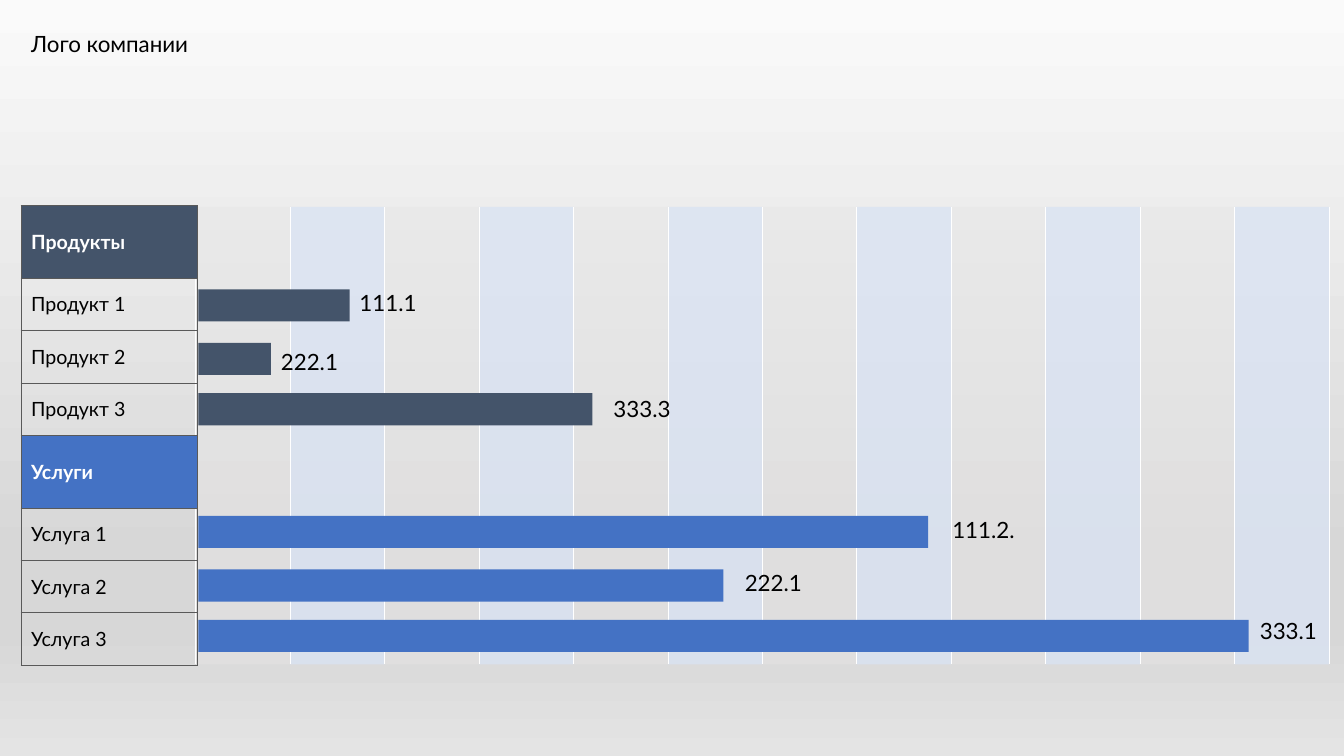
from dataclasses import dataclass
from typing import NamedTuple

from lxml.etree import SubElement
from pptx import Presentation
from pptx.dml.color import RGBColor
from pptx.enum.shapes import MSO_SHAPE
from pptx.enum.text import MSO_ANCHOR, MSO_AUTO_SIZE, PP_ALIGN
from pptx.oxml.ns import qn
from pptx.util import Cm, Pt


@dataclass(frozen=True)
class Theme:
    font: str = "Lato"
    text: str = "000000"
    on_dark: str = "FFFFFF"
    products: str = "44546A"
    services: str = "4472C4"
    label_border: str = "595959"
    grid_border: str = "FFFFFF"
    stripes: tuple = (("E7E6E6", 50), ("DAE3F3", 80))
    backdrop: tuple = ((0, "FAFAFA"), (74, "D7D7D7"), (83, "D7D7D7"), (100, "E4E4E4"))
    value_size: int = 16
    label_size: int = 14
    border_width: float = 0.5


THEME = Theme()
NO_STYLE_TABLE = "{2D5ABB26-0587-4C30-8999-92F81FD0307C}"


class Bar(NamedTuple):
    """A bar and its value label; lengths in centimetres."""
    name: str
    top: float
    length: float
    value: str
    value_left: float
    value_top: float
    value_width: float


GROUPS = (
    ("Продукты", THEME.products, (
        Bar("Продукт 1", 7.29, 3.81, "111.1", 8.81, 7.16, 2.62),
        Bar("Продукт 2", 8.64, 1.83, "222.1", 6.83, 8.64, 2.77),
        Bar("Продукт 3", 9.91, 9.93, "333.3", 15.21, 9.83, 2.44),
    )),
    ("Услуги", THEME.services, (
        Bar("Услуга 1", 13.0, 18.39, "111.2.", 23.75, 12.88, 2.77),
        Bar("Услуга 2", 14.35, 13.23, "222.1", 18.52, 14.22, 2.62),
        Bar("Услуга 3", 15.62, 26.47, "333.1", 31.5, 15.42, 2.44),
    )),
)
BAR_LEFT, BAR_HEIGHT, VALUE_HEIGHT = 5.0, 0.81, 0.94
HEADER_HEIGHT, ROW_HEIGHT = 1.83, 1.32
STRIPE_COUNT, STRIPE_WIDTH = 12, 2.38


def paint_background(slide):
    fill = slide.background.fill
    fill.gradient()
    fill.gradient_angle = 270
    stops = slide.element.find(".//" + qn("a:gsLst"))
    for stop in list(stops):
        stops.remove(stop)
    for percent, color in THEME.backdrop:
        stop = SubElement(stops, qn("a:gs"), pos=str(percent * 1000))
        SubElement(stop, qn("a:srgbClr"), val=color)


def add_run(paragraph, text, size, color=THEME.text, bold=False):
    run = paragraph.add_run()
    run.text = text
    font = run.font
    font.name, font.size, font.bold = THEME.font, Pt(size), bold
    font.color.rgb = RGBColor.from_string(color)


def add_text(slide, text, left, top, width, wrap=True,
             anchor=MSO_ANCHOR.MIDDLE, align=PP_ALIGN.LEFT):
    box = slide.shapes.add_textbox(Cm(left), Cm(top), Cm(width), Cm(VALUE_HEIGHT))
    frame = box.text_frame
    frame.word_wrap = wrap
    frame.auto_size = MSO_AUTO_SIZE.SHAPE_TO_FIT_TEXT
    frame.vertical_anchor = anchor
    paragraph = frame.paragraphs[0]
    paragraph.alignment = align
    add_run(paragraph, text, THEME.value_size)


def add_plain_table(slide, left, top, widths, heights):
    """Add a table without a preset style, sized by its columns and rows."""
    frame = slide.shapes.add_table(len(heights), len(widths), Cm(left), Cm(top),
                                   Cm(sum(widths)), Cm(sum(heights)))
    table = frame.table
    table.first_row = table.horz_banding = False
    frame.element.find(".//" + qn("a:tableStyleId")).text = NO_STYLE_TABLE
    for column, width in zip(table.columns, widths):
        column.width = Cm(width)
    for row, height in zip(table.rows, heights):
        row.height = Cm(height)
    return table


def set_borders(cell, sides, color):
    properties = cell._tc.get_or_add_tcPr()
    for side in sides:
        line = SubElement(properties, qn(f"a:ln{side}"), w=str(Pt(THEME.border_width)))
        solid = SubElement(line, qn("a:solidFill"))
        SubElement(solid, qn("a:srgbClr"), val=color)


def fill_cell(cell, color, opacity=100):
    cell.fill.solid()
    cell.fill.fore_color.rgb = RGBColor.from_string(color)
    if opacity < 100:
        rgb = cell._tc.tcPr.find(qn("a:solidFill")).find(qn("a:srgbClr"))
        SubElement(rgb, qn("a:alpha"), val=str(opacity * 1000))


def add_stripes(slide):
    table = add_plain_table(slide, 4.93, 5.21, [STRIPE_WIDTH] * STRIPE_COUNT, [11.53])
    for index in range(STRIPE_COUNT):
        cell = table.cell(0, index)
        set_borders(cell, "LR", THEME.grid_border)
        fill_cell(cell, *THEME.stripes[index % 2])


def add_labels(slide):
    rows = []
    for title, color, bars in GROUPS:
        rows.append((title, color))
        rows.extend((bar.name, None) for bar in bars)
    heights = [HEADER_HEIGHT if color else ROW_HEIGHT for _, color in rows]
    table = add_plain_table(slide, 0.53, 5.18, [4.44], heights)
    for index, (text, header_color) in enumerate(rows):
        cell = table.cell(index, 0)
        cell.vertical_anchor = MSO_ANCHOR.MIDDLE
        set_borders(cell, "LRTB", THEME.label_border)
        if header_color:
            fill_cell(cell, header_color)
        else:
            cell.fill.background()
        add_run(cell.text_frame.paragraphs[0], text, THEME.label_size,
                THEME.on_dark if header_color else THEME.text, bool(header_color))


def add_bar(slide, bar, color):
    rect = slide.shapes.add_shape(MSO_SHAPE.RECTANGLE, Cm(BAR_LEFT), Cm(bar.top),
                                  Cm(bar.length), Cm(BAR_HEIGHT))
    rect.shadow.inherit = False
    rect.fill.solid()
    rect.fill.fore_color.rgb = RGBColor.from_string(color)
    rect.line.fill.background()
    add_text(slide, bar.value, bar.value_left, bar.value_top, bar.value_width)


def main():
    deck = Presentation()
    deck.slide_width, deck.slide_height = Cm(33.87), Cm(19.05)
    slide = deck.slides.add_slide(deck.slide_layouts[6])
    paint_background(slide)
    add_stripes(slide)
    add_labels(slide)
    for _, color, bars in GROUPS:
        for bar in bars:
            add_bar(slide, bar, color)
    add_text(slide, "Лого компании", 0.53, 0.64, 4.47, wrap=False,
             anchor=MSO_ANCHOR.TOP, align=PP_ALIGN.CENTER)
    deck.save("out.pptx")


if __name__ == "__main__":
    main()
